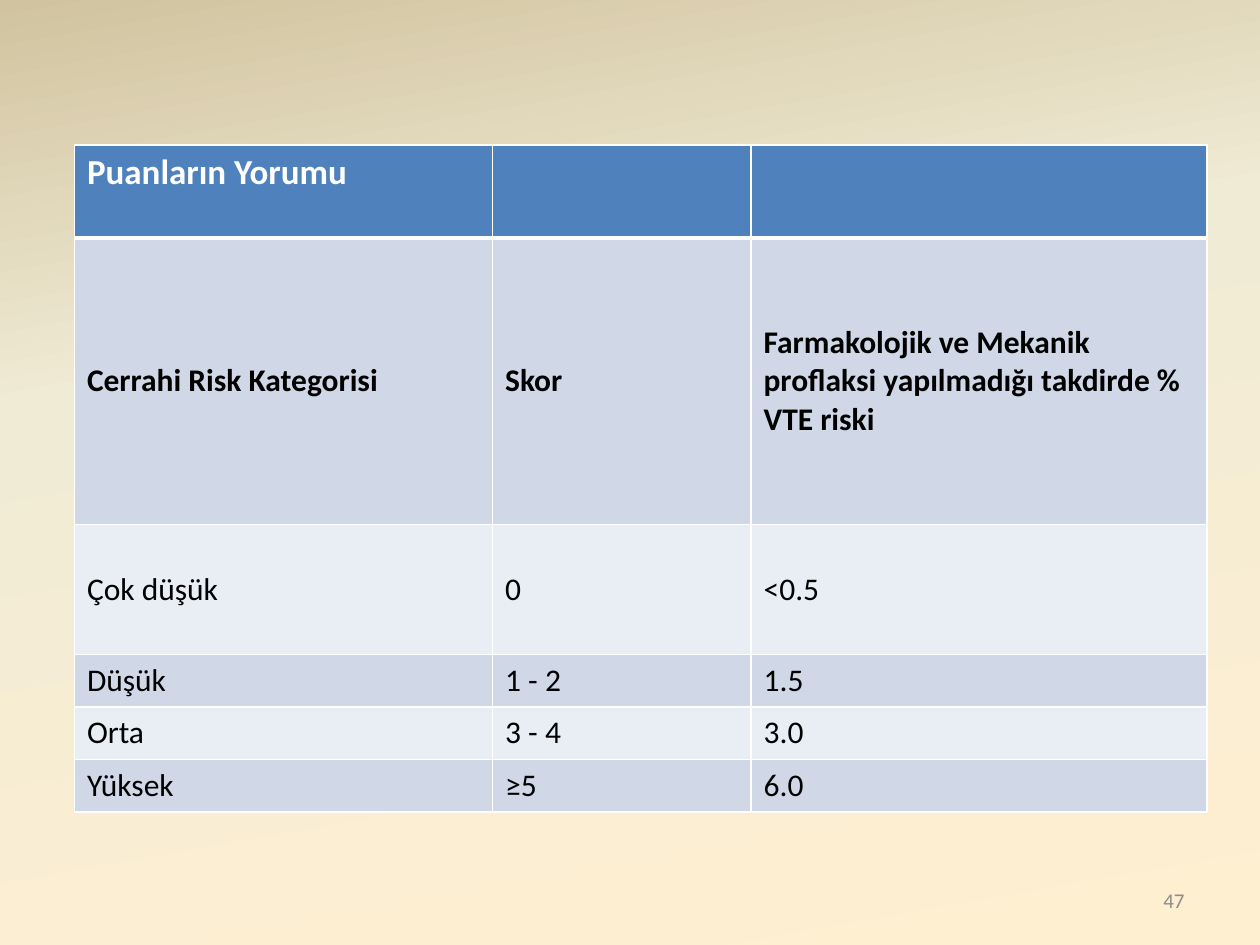
"""Builds the slide that explains the surgical VTE risk scores."""
from copy import deepcopy

from lxml import etree
from pptx import Presentation
from pptx.dml.color import RGBColor
from pptx.enum.text import MSO_ANCHOR, PP_ALIGN
from pptx.oxml.ns import qn
from pptx.util import Cm, Pt

MIDDLE, TOP = MSO_ANCHOR.MIDDLE, MSO_ANCHOR.TOP
RIGHT = PP_ALIGN.RIGHT
FONT = "Calibri"
COLORS = {
    "header": "4F81BD",
    "band_dark": "D0D8E8",
    "band_light": "E9EDF4",
    "white": "FFFFFF",
    "black": "000000",
    "number": "8C8C8C",
}
BACKGROUND = [(0, "FFEFD1"), (0.65, "F0EBD5"), (1, "D1C39F")]
COL_WIDTHS = [8.43, 5.21, 9.19]
ROW_HEIGHTS = [1.88, 5.77, 2.62, 1.06, 1.06, 1.06]
ROWS = [
    ("Puanların Yorumu", "", ""),
    ("Cerrahi Risk Kategorisi", "Skor",
     "Farmakolojik ve Mekanik proflaksi yapılmadığı takdirde % VTE riski"),
    ("Çok düşük", "0", "<0.5"),
    ("Düşük", "1 - 2", "1.5"),
    ("Orta", "3 - 4", "3.0"),
    ("Yüksek", "≥5", "6.0"),
]


def rgb(name):
    return RGBColor.from_string(COLORS[name])


def set_background(slide):
    fill = slide.background.fill
    fill.gradient()
    fill.gradient_angle = 100
    stop_list = slide.element.xpath(".//p:bg//a:gsLst")[0]
    stop_list.append(deepcopy(stop_list[0]))
    for stop, (position, color) in zip(fill.gradient_stops, BACKGROUND):
        stop.position = position
        stop.color.rgb = RGBColor.from_string(color)


def write_text(tf, text, size, color, bold=False):
    tf.text = text
    for r in tf.paragraphs[0].runs:
        r.font.name = FONT
        r.font.size = Pt(size)
        r.font.bold = bold
        r.font.color.rgb = rgb(color)


def set_borders(cell, bottom, top):
    props = cell._tc.get_or_add_tcPr()
    widths = {"a:lnL": 1, "a:lnR": 1, "a:lnT": top, "a:lnB": bottom}
    for i, (tag, width) in enumerate(widths.items()):
        ln = etree.Element(qn(tag), w=str(Pt(width)))
        solid = etree.SubElement(ln, qn("a:solidFill"))
        etree.SubElement(solid, qn("a:srgbClr"), val=COLORS["white"])
        props.insert(i, ln)


def format_cell(cell, row, text):
    header = row == 0
    band = "band_dark" if row % 2 else "band_light"
    cell.fill.solid()
    cell.fill.fore_color.rgb = rgb("header" if header else band)
    cell.vertical_anchor = TOP if header else MIDDLE
    write_text(cell.text_frame, text, 20 if header else 18,
               "white" if header else "black", bold=row < 2)
    set_borders(cell, bottom=3 if header else 1, top=3 if row == 1 else 1)


def add_risk_table(slide):
    frame = slide.shapes.add_table(
        len(ROWS), len(COL_WIDTHS), Cm(1.5), Cm(2.92),
        Cm(sum(COL_WIDTHS)), Cm(sum(ROW_HEIGHTS)))
    table = frame.table
    for column, width in zip(table.columns, COL_WIDTHS):
        column.width = Cm(width)
    for i, (height, texts) in enumerate(zip(ROW_HEIGHTS, ROWS)):
        table.rows[i].height = Cm(height)
        for j, text in enumerate(texts):
            format_cell(table.cell(i, j), i, text)


def add_page_number(slide, text):
    sp = slide.shapes.add_textbox(Cm(18.2), Cm(17.65), Cm(5.93), Cm(1.01))
    tf = sp.text_frame
    tf.word_wrap = True
    tf.vertical_anchor = MIDDLE
    write_text(tf, text, 12, "number")
    tf.paragraphs[0].alignment = RIGHT


def main():
    prs = Presentation()
    prs.slide_width, prs.slide_height = Cm(25.4), Cm(19.05)
    slide = prs.slides.add_slide(prs.slide_layouts[6])
    set_background(slide)
    add_risk_table(slide)
    add_page_number(slide, "47")
    prs.save("out.pptx")


if __name__ == "__main__":
    main()
